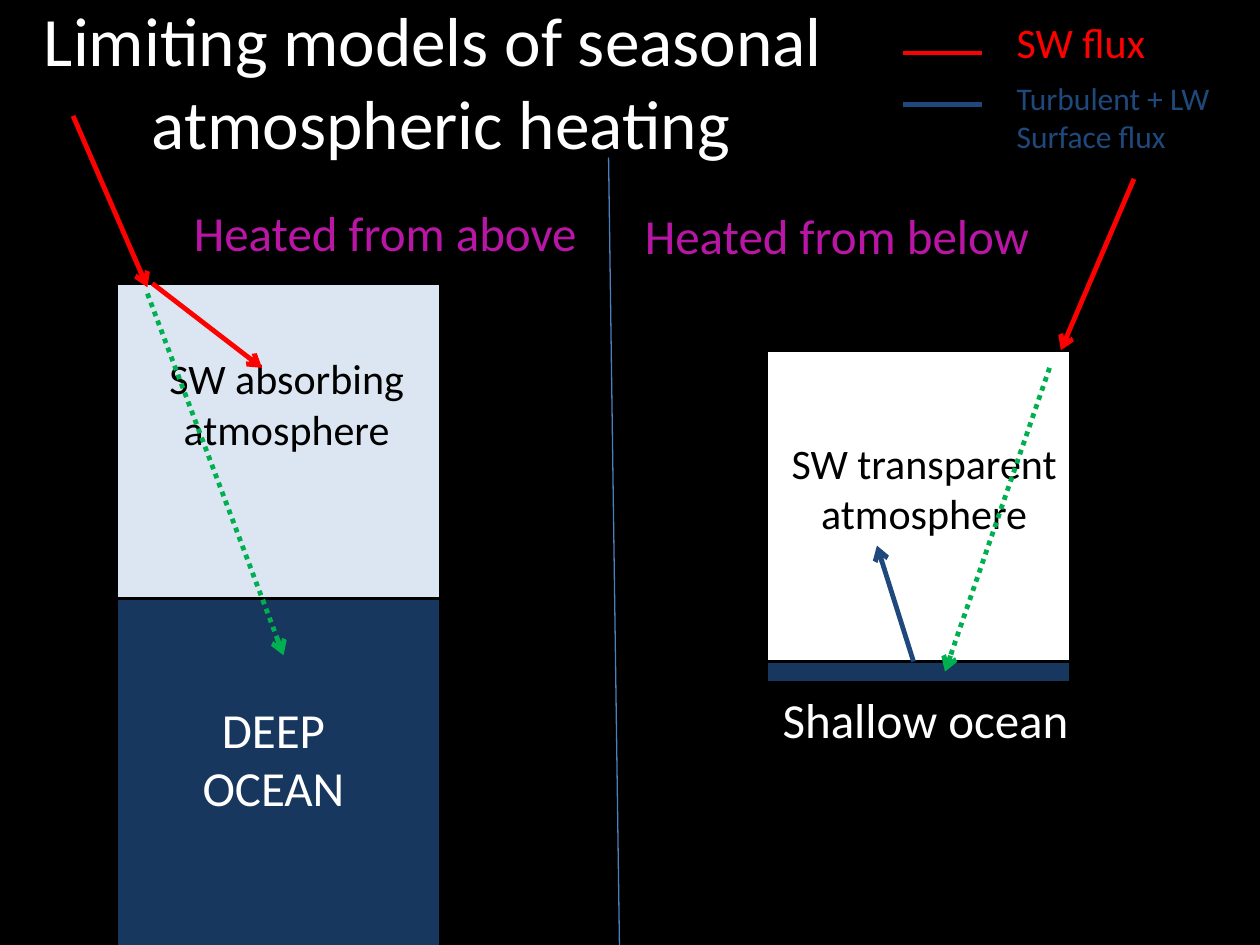
from lxml.etree import SubElement
from pptx import Presentation
from pptx.dml.color import RGBColor
from pptx.enum.dml import MSO_LINE_DASH_STYLE as Dash
from pptx.enum.shapes import MSO_CONNECTOR, MSO_SHAPE
from pptx.enum.text import MSO_ANCHOR, MSO_AUTO_SIZE, PP_ALIGN
from pptx.oxml.ns import qn
from pptx.util import Inches, Pt

BLACK = RGBColor(0x00, 0x00, 0x00)
WHITE = RGBColor(0xFF, 0xFF, 0xFF)
RED = RGBColor(0xFF, 0x00, 0x00)
GREEN = RGBColor(0x00, 0xB0, 0x50)
BLUE = RGBColor(0x1F, 0x49, 0x7D)
DIVIDER = RGBColor(0x4B, 0x7E, 0xBC)
PURPLE = RGBColor(0xBA, 0x16, 0xA6)
SKY = RGBColor(0xDC, 0xE6, 0xF2)
OCEAN = RGBColor(0x17, 0x37, 0x5E)
LEFT, CENTER = PP_ALIGN.LEFT, PP_ALIGN.CENTER

TITLE = "Limiting models of seasonal \vatmospheric heating"
TITLE_AT = (-1.25, 0.08, 9.5, 1.12)

# place (left, top, width, height), fill
LAYERS = [
    ((0.92, 2.25, 2.58, 2.5), SKY),
    ((0.92, 4.75, 2.58, 3.08), OCEAN),
    ((6.08, 2.78, 2.42, 2.49), WHITE),
    ((6.08, 5.25, 2.42, 0.17), OCEAN),
]

# paragraphs, place, size, colour, alignment
LABELS = [
    (["DEEP", "OCEAN"], (1.13, 5.5, 2.08, 1.04), 28, WHITE, CENTER),
    (["SW absorbing", "atmosphere"], (1.13, 2.75, 2.29, 0.91), 24, BLACK, CENTER),
    (["SW transparent", "atmosphere"], (6.08, 3.42, 2.51, 0.91), 24, BLACK, CENTER),
    (["Shallow ocean"], (5.92, 5.42, 2.85, 0.57), 28, WHITE, CENTER),
    (["SW flux"], (7.97, 0.08, 1.75, 0.5), 24, RED, LEFT),
    (["Turbulent + LW", "Surface flux"], (7.97, 0.58, 2.03, 0.71), 18, BLUE, LEFT),
    (["Heated from above"], (1.44, 1.56, 3.64, 0.57), 28, PURPLE, LEFT),
    (["Heated from below"], (5.02, 1.58, 3.64, 0.57), 28, PURPLE, LEFT),
]

SOLID_ARROW = {"width": 2.75, "arrow": True}
DOTTED_ARROW = {"width": 2.75, "arrow": True, "dash": Dash.ROUND_DOT}
LEGEND_KEY = {"width": 2.5}

# from x, from y, to x, to y, colour, style
LINES = [
    ((0.58, 0.92, 1.17, 2.28), RED, SOLID_ARROW),
    ((9, 1.42, 8.42, 2.78), RED, SOLID_ARROW),
    ((8.33, 2.92, 7.5, 5.33), GREEN, DOTTED_ARROW),
    ((1.17, 2.33, 2.25, 5.2), GREEN, DOTTED_ARROW),
    ((1.21, 2.25, 2.08, 2.92), RED, SOLID_ARROW),
    ((4.83, 1.25, 4.92, 7.75), DIVIDER, {"width": 0.75}),
    ((7.25, 5.25, 6.96, 4.33), BLUE, SOLID_ARROW),
    ((7.17, 0.42, 7.79, 0.42), RED, LEGEND_KEY),
    ((7.17, 0.83, 7.79, 0.83), BLUE, LEGEND_KEY),
]


def inches(values):
    return [Inches(value) for value in values]


def style_paragraph(para, size, color, align):
    para.alignment = align
    for name, value in {"name": "Calibri", "size": Pt(size)}.items():
        setattr(para.font, name, value)
    para.font.color.rgb = color


def add_title(page):
    title = page.shapes.title
    for name, value in zip(("left", "top", "width", "height"), inches(TITLE_AT)):
        setattr(title, name, value)
    frame = title.text_frame
    frame.text = TITLE
    frame.word_wrap = True
    frame.vertical_anchor = MSO_ANCHOR.MIDDLE
    style_paragraph(frame.paragraphs[0], 39.6, WHITE, CENTER)


def add_layer(page, place, fill):
    layer = page.shapes.add_shape(MSO_SHAPE.RECTANGLE, *inches(place))
    layer.shadow.inherit = False
    layer.fill.solid()
    layer.fill.fore_color.rgb = fill
    layer.line.color.rgb = BLACK
    layer.line.width = Pt(2)


def add_label(page, texts, place, size, color, align):
    frame = page.shapes.add_textbox(*inches(place)).text_frame
    frame.word_wrap = True
    frame.auto_size = MSO_AUTO_SIZE.SHAPE_TO_FIT_TEXT
    frame.text = "\n".join(texts)
    for para in frame.paragraphs:
        style_paragraph(para, size, color, align)


def add_line(page, ends, color, width, arrow=False, dash=None):
    connector = page.shapes.add_connector(MSO_CONNECTOR.STRAIGHT, *inches(ends))
    line = connector.line
    line.color.rgb = color
    line.width = Pt(width)
    if dash:
        line.dash_style = dash
    properties = connector.element.spPr
    if arrow:
        SubElement(properties.find(qn("a:ln")), qn("a:tailEnd"), type="arrow")
    SubElement(properties, qn("a:effectLst"))


def main():
    deck = Presentation()
    deck.slide_width, deck.slide_height = Inches(10), Inches(7.5)
    page = deck.slides.add_slide(deck.slide_layouts[5])
    page.background.fill.solid()
    page.background.fill.fore_color.rgb = BLACK
    add_title(page)
    for layer in LAYERS:
        add_layer(page, *layer)
    for label in LABELS:
        add_label(page, *label)
    for ends, color, style in LINES:
        add_line(page, ends, color, **style)
    deck.save("out.pptx")


if __name__ == "__main__":
    main()
